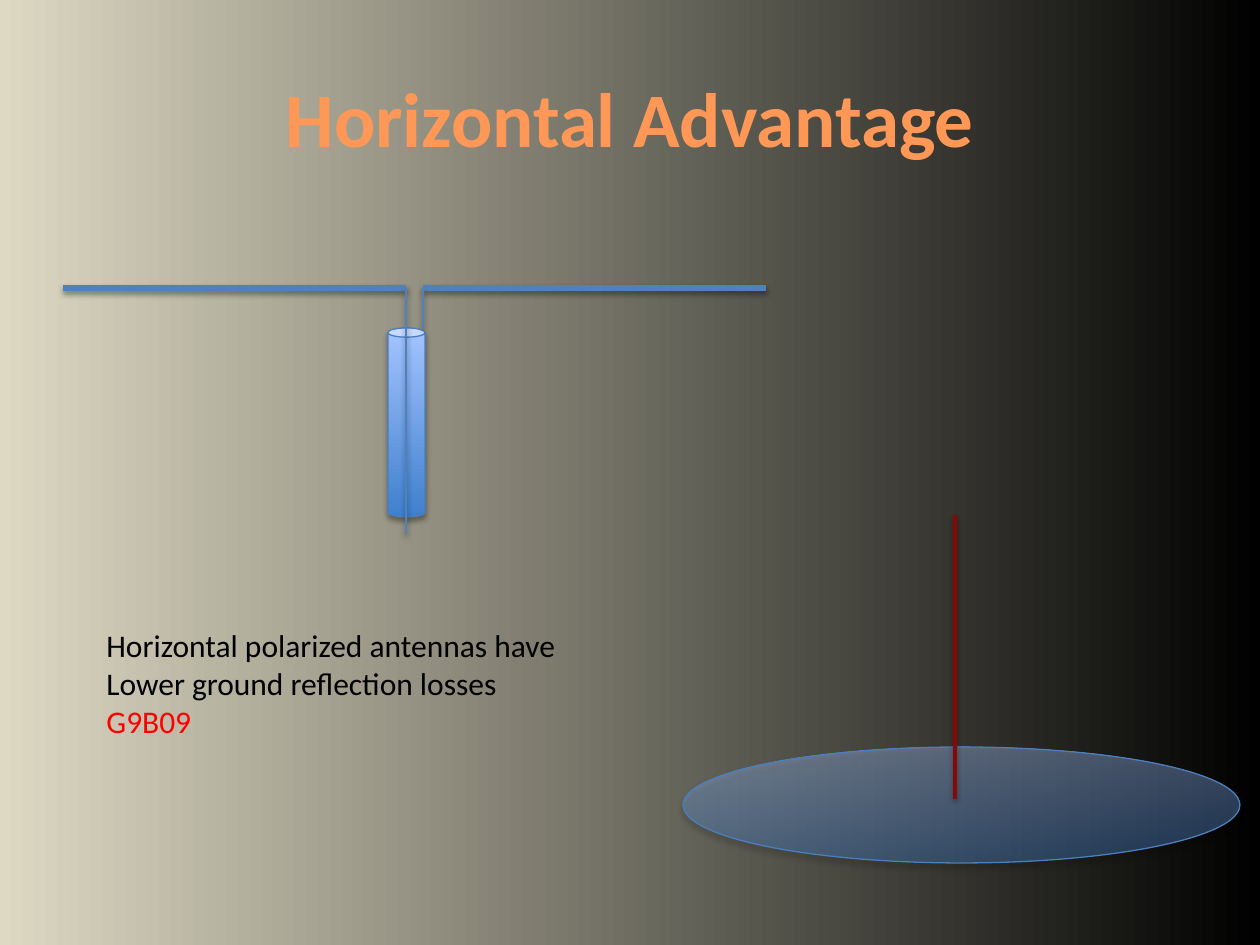
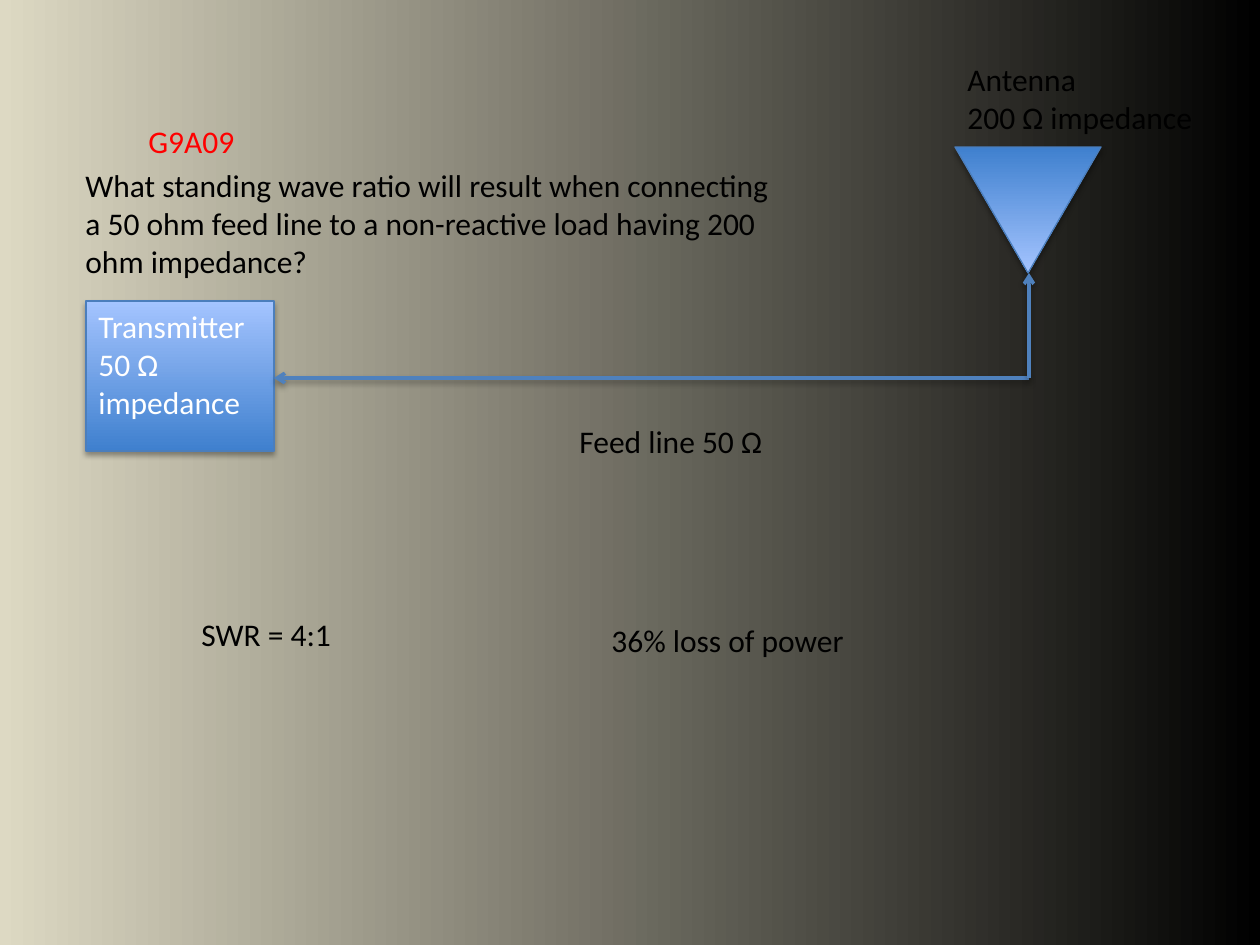
from lxml import etree
from pptx import Presentation
from pptx.dml.color import RGBColor
from pptx.enum.shapes import MSO_CONNECTOR, MSO_SHAPE
from pptx.enum.text import MSO_ANCHOR, MSO_AUTO_SIZE, PP_ALIGN
from pptx.oxml.ns import qn
from pptx.util import Pt

CAN, DISC = MSO_SHAPE.CAN, MSO_SHAPE.FLOWCHART_CONNECTOR
RECTANGLE, TRIANGLE = MSO_SHAPE.RECTANGLE, MSO_SHAPE.ISOSCELES_TRIANGLE
STRAIGHT = MSO_CONNECTOR.STRAIGHT
LEFT, CENTER = PP_ALIGN.LEFT, PP_ALIGN.CENTER
TOP, MIDDLE = MSO_ANCHOR.TOP, MSO_ANCHOR.MIDDLE
GROW = MSO_AUTO_SIZE.SHAPE_TO_FIT_TEXT

SCALE = 914400 / 126
BLACK, WHITE, RED = "000000", "FFFFFF", "FF0000"
ORANGE, SAND, MAROON = "FF9856", "DDD9C3", "860908"
LINE_BLUE, EDGE_BLUE = "4F81BD", "4B7EBC"
BLUE_BLEND = ("3F80CE", "A4C4FF")
color = RGBColor.from_string


def px(*lengths):
    return [round(length * SCALE) for length in lengths]


def add_shadow(item, opacity, distance):
    effects = etree.SubElement(item._element.spPr, qn("a:effectLst"))
    shadow = etree.SubElement(effects, qn("a:outerShdw"), blurRad=str(Pt(3.1)),
                              dist=str(Pt(distance)), dir="5400000", rotWithShape="0")
    shade = etree.SubElement(shadow, qn("a:srgbClr"), val=BLACK)
    etree.SubElement(shade, qn("a:alpha"), val=str(opacity * 1000))


feed_left, feed_right, dipole_y = 406, 423, 288
corner_x, feed_y = 1029, 378

pages = [
    {
        "title": "Horizontal Advantage",
        "shapes": [
            (CAN, (388, 328, 37, 189), 0, 100, []),
            (DISC, (683, 747, 557, 116), 0, 37, []),
        ],
        "lines": [
            ((63, dipole_y, feed_left, dipole_y), LINE_BLUE, 3.5, False),
            ((feed_right, dipole_y, 766, dipole_y), LINE_BLUE, 3.5, False),
            ((feed_right, dipole_y, feed_right, 328), LINE_BLUE, 1.25, False),
            ((feed_left, dipole_y, feed_left, 534), LINE_BLUE, 1.25, False),
            ((955, 515, 955, 799), MAROON, 2, False),
        ],
        "texts": [
            ((94, 620, 483, 127), True, [[
                ("Horizontal polarized antennas have Lower ground reflection losses ", BLACK),
                ("G9B09", RED)]]),
        ],
    },
    {
        "title": None,
        "shapes": [
            (RECTANGLE, (86, 301, 188, 150), 0, 100,
             [[("Transmitter", WHITE)], [("50 Ω impedance", WHITE)]]),
            (TRIANGLE, (955, 147, 146, 126), 180, 100, []),
        ],
        "lines": [
            ((corner_x, feed_y, 274, feed_y), LINE_BLUE, 2, True),
            ((corner_x, feed_y, corner_x, 273), LINE_BLUE, 2, True),
        ],
        "texts": [
            ((955, 54, 252, 89), False,
             [[("Antenna", BLACK)], [("200 Ω impedance", BLACK)]]),
            ((567, 416, 210, 50), False, [[("Feed line 50 Ω", BLACK)]]),
            ((189, 609, 156, 50), False, [[("SWR = 4:1", BLACK)]]),
            ((136, 116, 112, 50), False, [[("G9A09", RED)]]),
            ((599, 615, 261, 50), False, [[("36% loss of power", BLACK)]]),
            ((73, 160, 727, 165), True, [[
                ("What standing wave ratio will result when connecting a 50 ohm feed line "
                 "to a non-reactive load having 200 ohm impedance?", BLACK)]]),
        ],
    },
]

deck = Presentation()
deck.slide_width, deck.slide_height = px(1260, 945)

for content in pages:
    page = deck.slides.add_slide(deck.slide_layouts[5 if content["title"] else 6])
    backdrop = page.background.fill
    backdrop.gradient()
    backdrop.gradient_angle = 0
    for stop, shade in zip(backdrop.gradient_stops, (SAND, BLACK)):
        stop.color.rgb = color(shade)

    if content["title"]:
        title = page.shapes.title
        title.left, title.top, title.width, title.height = px(63, 38, 1134, 157)
        title.text_frame.text = content["title"]
        title.text_frame.vertical_anchor = MIDDLE
        para = title.text_frame.paragraphs[0]
        para.alignment = CENTER
        for name, value in {"name": "Calibri", "size": Pt(44), "bold": True}.items():
            setattr(para.runs[0].font, name, value)
        para.runs[0].font.color.rgb = color(ORANGE)

    filled_boxes = []
    for kind, place, turn, opacity, paragraphs in content["shapes"]:
        shape = page.shapes.add_shape(kind, *px(*place))
        shape.rotation = turn
        shape.fill.gradient()
        shape.fill.gradient_angle = 90
        for stop, shade in zip(shape.fill.gradient_stops, BLUE_BLEND):
            stop.color.rgb = color(shade)
        if opacity < 100:
            for shade in shape._element.spPr.iter(qn("a:srgbClr")):
                etree.SubElement(shade, qn("a:alpha"), val=str(opacity * 1000))
        shape.line.color.rgb = color(EDGE_BLUE)
        shape.line.width = Pt(0.75)
        add_shadow(shape, 35, 1.8)
        if paragraphs:
            filled_boxes.append((shape, True, None, paragraphs))

    for ends, shade, width, arrow in content["lines"]:
        wire = page.shapes.add_connector(STRAIGHT, *px(*ends))
        wire.line.color.rgb = color(shade)
        wire.line.width = Pt(width)
        if arrow:
            etree.SubElement(wire.line._get_or_add_ln(), qn("a:tailEnd"), type="arrow")
        add_shadow(wire, 38, 1.6)

    text_boxes = [(page.shapes.add_textbox(*px(*place)), wrap, GROW, paragraphs)
                  for place, wrap, paragraphs in content["texts"]]
    for box, wrap, fit, paragraphs in filled_boxes + text_boxes:
        frame = box.text_frame
        frame_format = {"word_wrap": wrap, "auto_size": fit, "vertical_anchor": TOP}
        for name, value in frame_format.items():
            setattr(frame, name, value)
        for index, spans in enumerate(paragraphs):
            para = frame.add_paragraph() if index else frame.paragraphs[0]
            para.alignment = LEFT
            for words, shade in spans:
                span = para.add_run()
                span.text = words
                for name, value in {"name": "Calibri", "size": Pt(18)}.items():
                    setattr(span.font, name, value)
                span.font.color.rgb = color(shade)

deck.save("out.pptx")
